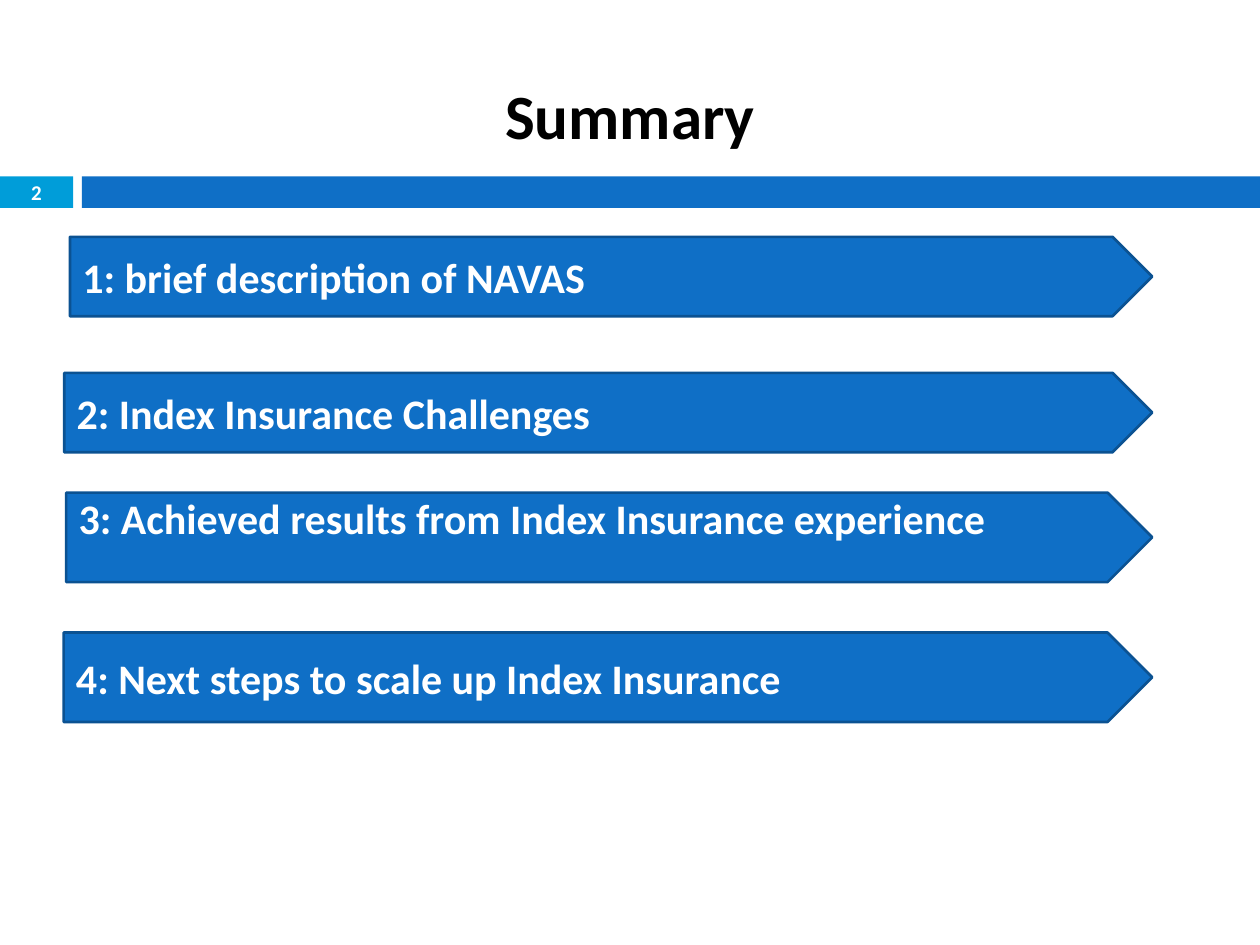
import pptx
import pptx.dml.color
import pptx.enum.shapes
import pptx.enum.text
import pptx.util

SHAPES = pptx.enum.shapes.MSO_SHAPE
ANCHOR = pptx.enum.text.MSO_ANCHOR
ALIGN = pptx.enum.text.PP_ALIGN

THEME = {
    "font": "Calibri",
    "blue": "0F6FC6",
    "cyan": "009DD9",
    "outline": "0B5292",
    "black": "000000",
    "white": "FFFFFF",
    "title_size": 36,
    "item_size": 24,
    "number_size": 12,
}

deck = pptx.Presentation()
deck.slide_width = pptx.util.Inches(10)
deck.slide_height = pptx.util.Inches(7.5)
page = deck.slides.add_slide(deck.slide_layouts[6])

# Grid: 100 columns by 75 rows, each cell a tenth of an inch
COLUMN = deck.slide_width / 100
ROW = deck.slide_height / 75


def add_box(preset, left, top, width, height, fill):
    """Add a plain filled shape, or a text box when preset is None, placed in grid cells."""
    place = [round(left * COLUMN), round(top * ROW), round(width * COLUMN), round(height * ROW)]
    if preset is None:
        return page.shapes.add_textbox(*place)
    box = page.shapes.add_shape(preset, *place)
    box.shadow.inherit = False
    box.fill.solid()
    box.fill.fore_color.rgb = pptx.dml.color.RGBColor.from_string(THEME[fill])
    box.line.fill.background()
    return box


def add_text(box, text, size, color, align, anchor=ANCHOR.MIDDLE):
    frame = box.text_frame
    frame.word_wrap = True
    frame.vertical_anchor = anchor
    frame.margin_top = frame.margin_bottom = 0
    para = frame.paragraphs[0]
    para.alignment = align
    span = para.add_run()
    span.text = text
    span.font.name = THEME["font"]
    span.font.size = pptx.util.Pt(THEME[size])
    span.font.bold = True
    span.font.color.rgb = pptx.dml.color.RGBColor.from_string(THEME[color])


# Title and the band below it
title = add_box(None, 5, 5, 90, 8.2, None)
add_text(title, "Summary", "title_size", "black", ALIGN.CENTER)
number = add_box(SHAPES.RECTANGLE, 0, 14, 5.8, 2.5, "cyan")
add_text(number, "2", "number_size", "white", ALIGN.CENTER)
add_box(SHAPES.RECTANGLE, 6.5, 14, 93.5, 2.5, "blue")

# Agenda arrows share one right edge: left, top, height, anchor, text
ARROW_RIGHT = 91.45
agenda = [
    (5.55, 18.8, 6.3, ANCHOR.MIDDLE, "brief description of NAVAS"),
    (5.1, 29.6, 6.3, ANCHOR.MIDDLE, "Index Insurance Challenges"),
    (5.25, 39.1, 7.1, ANCHOR.TOP, "Achieved results from Index Insurance experience"),
    (5.05, 50.2, 7.1, ANCHOR.MIDDLE, "Next steps to scale up Index Insurance"),
]
for position, (left, top, height, anchor, text) in enumerate(agenda, start=1):
    arrow = add_box(SHAPES.PENTAGON, left, top, ARROW_RIGHT - left, height, "blue")
    arrow.line.color.rgb = pptx.dml.color.RGBColor.from_string(THEME["outline"])
    arrow.line.width = pptx.util.Pt(1.5)
    add_text(arrow, f"{position}: {text}", "item_size", "white", ALIGN.LEFT, anchor)

deck.save("out.pptx")
